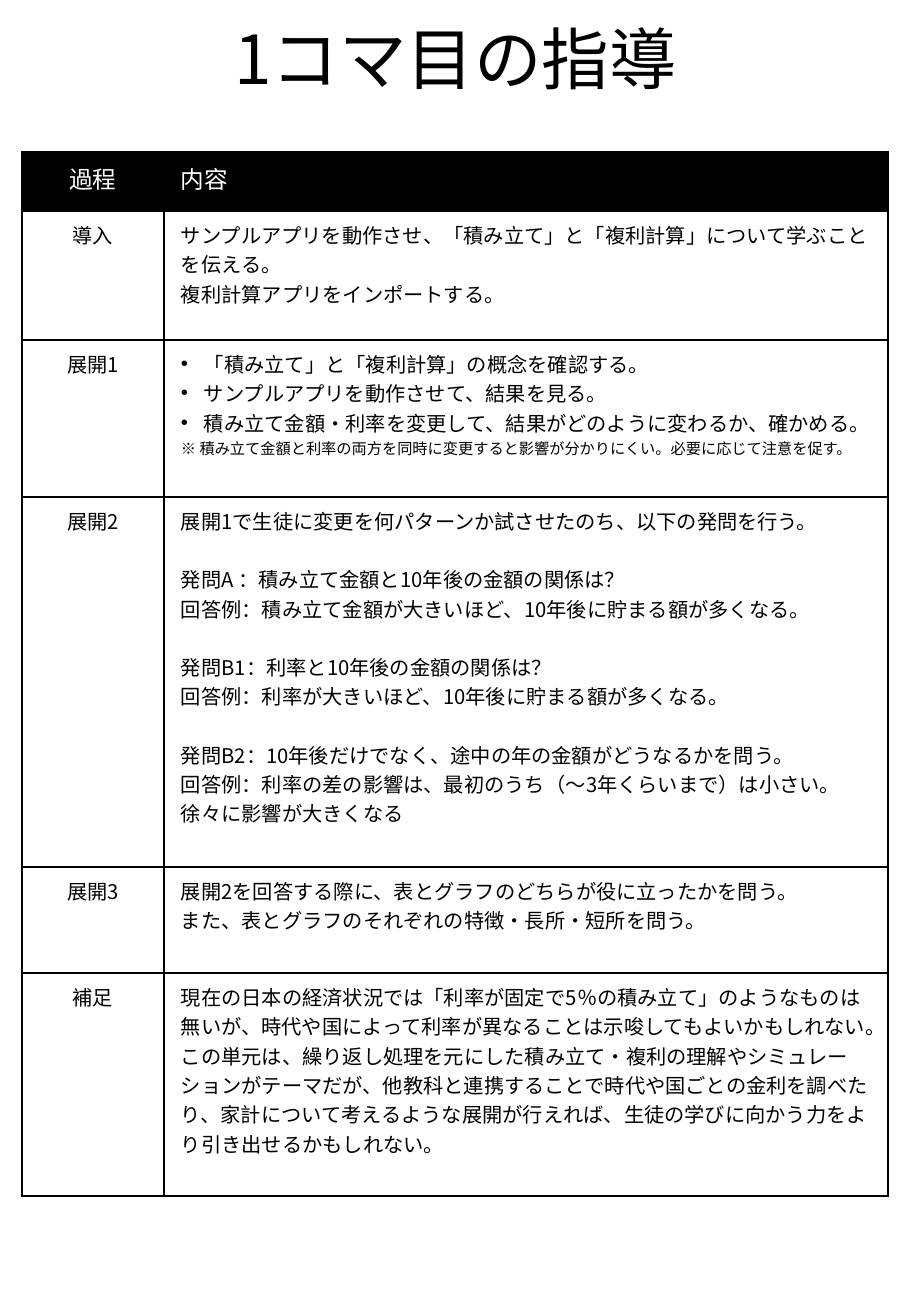
"""Build the one-page lesson plan: a title above a table of teaching stages."""
from lxml.etree import SubElement
from pptx import Presentation
from pptx.dml.color import RGBColor
from pptx.enum.text import MSO_ANCHOR as Anchor, PP_ALIGN as Align
from pptx.oxml import parse_xml
from pptx.oxml.ns import nsdecls, qn
from pptx.util import Pt

PX = 914400 * 2 // 243
FONT = "Noto Sans CJK JP"
BLACK, WHITE = "000000", "FFFFFF"
LINE_GAP = 29


def color(value):
    return RGBColor.from_string(value)


def write(paragraph, text, size=12, ink=BLACK, align=Align.LEFT, gap=0, spacing=1.0, bullet=False):
    paragraph.alignment = align
    paragraph.line_spacing = spacing
    paragraph.space_before = gap * PX
    run = paragraph.add_run()
    run.text = text
    run.font.size = Pt(size)
    run.font.name = FONT
    run.font.color.rgb = color(ink)
    SubElement(run.font._element, qn("a:ea"), typeface=FONT)
    if bullet:
        properties = paragraph._p.get_or_add_pPr()
        properties.set("marL", str(23 * PX))
        properties.set("indent", str(-23 * PX))
        SubElement(properties, qn("a:buFont"), typeface="Arial")
        SubElement(properties, qn("a:buChar"), char="•")


header = {"size": 14, "ink": WHITE}
bullet = {"bullet": True}
question = {"gap": LINE_GAP}
stages = [
    ("過程", 59, [("内容", header)]),
    ("導入", 129, [
        ("サンプルアプリを動作させ、「積み立て」と「複利計算」について学ぶことを伝える。", {}),
        ("複利計算アプリをインポートする。", {}),
    ]),
    ("展開1", 157, [
        ("「積み立て」と「複利計算」の概念を確認する。", bullet),
        ("サンプルアプリを動作させて、結果を見る。", bullet),
        ("積み立て金額・利率を変更して、結果がどのように変わるか、確かめる。", bullet),
        ("※ 積み立て金額と利率の両方を同時に変更すると影響が分かりにくい。必要に応じて注意を促す。", {"size": 9}),
    ]),
    ("展開2", 370, [
        ("展開1で生徒に変更を何パターンか試させたのち、以下の発問を行う。", {}),
        ("発問A ：積み立て金額と10年後の金額の関係は？", question),
        ("回答例：積み立て金額が大きいほど、10年後に貯まる額が多くなる。", {}),
        ("発問B1：利率と10年後の金額の関係は？", question),
        ("回答例：利率が大きいほど、10年後に貯まる額が多くなる。", {}),
        ("発問B2：10年後だけでなく、途中の年の金額がどうなるかを問う。", question),
        ("回答例：利率の差の影響は、最初のうち（〜3年くらいまで）は小さい。徐々に影響が大きくなる", {}),
    ]),
    ("展開3", 106, [
        ("展開2を回答する際に、表とグラフのどちらが役に立ったかを問う。", {}),
        ("また、表とグラフのそれぞれの特徴・長所・短所を問う。", {}),
    ]),
    ("補足", 223, [
        ("現在の日本の経済状況では「利率が固定で5％の積み立て」のようなものは無いが、"
         "時代や国によって利率が異なることは示唆してもよいかもしれない。", {}),
        ("この単元は、繰り返し処理を元にした積み立て・複利の理解やシミュレーションがテーマだが、"
         "他教科と連携することで時代や国ごとの金利を調べたり、家計について考えるような展開が行えれば、"
         "生徒の学びに向かう力をより引き出せるかもしれない。", {}),
    ]),
]

presentation = Presentation()
presentation.slide_width = 911 * PX
presentation.slide_height = 1316 * PX
slide = presentation.slides.add_slide(presentation.slide_layouts[6])

title = slide.shapes.add_textbox(68 * PX, 7 * PX, 775 * PX, 98 * PX).text_frame
title.word_wrap = True
title.vertical_anchor = Anchor.BOTTOM
write(title.paragraphs[0], "1コマ目の指導", size=40, align=Align.CENTER, spacing=0.9)

column_widths = [142, 724]
table_height = sum(height for _, height, _ in stages)
table = slide.shapes.add_table(
    len(stages), 2, 22 * PX, 152 * PX, sum(column_widths) * PX, table_height * PX).table
table.first_row = table.horz_banding = False
for column, width in zip(table.columns, column_widths):
    column.width = width * PX

for row, (stage, height, content) in zip(table.rows, stages):
    row.height = height * PX
    is_header = stage == "過程"
    label = [(stage, {**(header if is_header else {}), "align": Align.CENTER})]
    for cell, lines in zip(row.cells, (label, content)):
        cell.margin_left = cell.margin_right = 17 * PX
        cell.margin_top = cell.margin_bottom = 9 * PX
        cell.fill.solid()
        cell.fill.fore_color.rgb = color(BLACK if is_header else WHITE)
        for index, side in enumerate(("lnL", "lnR", "lnT", "lnB")):
            border = parse_xml(
                f'<a:{side} {nsdecls("a")} w="{Pt(1)}"><a:solidFill>'
                f'<a:srgbClr val="{BLACK}"/></a:solidFill></a:{side}>')
            cell._tc.get_or_add_tcPr().insert(index, border)
        for index, (text, style) in enumerate(lines):
            frame = cell.text_frame
            write(frame.add_paragraph() if index else frame.paragraphs[0], text, **style)

presentation.save("out.pptx")
